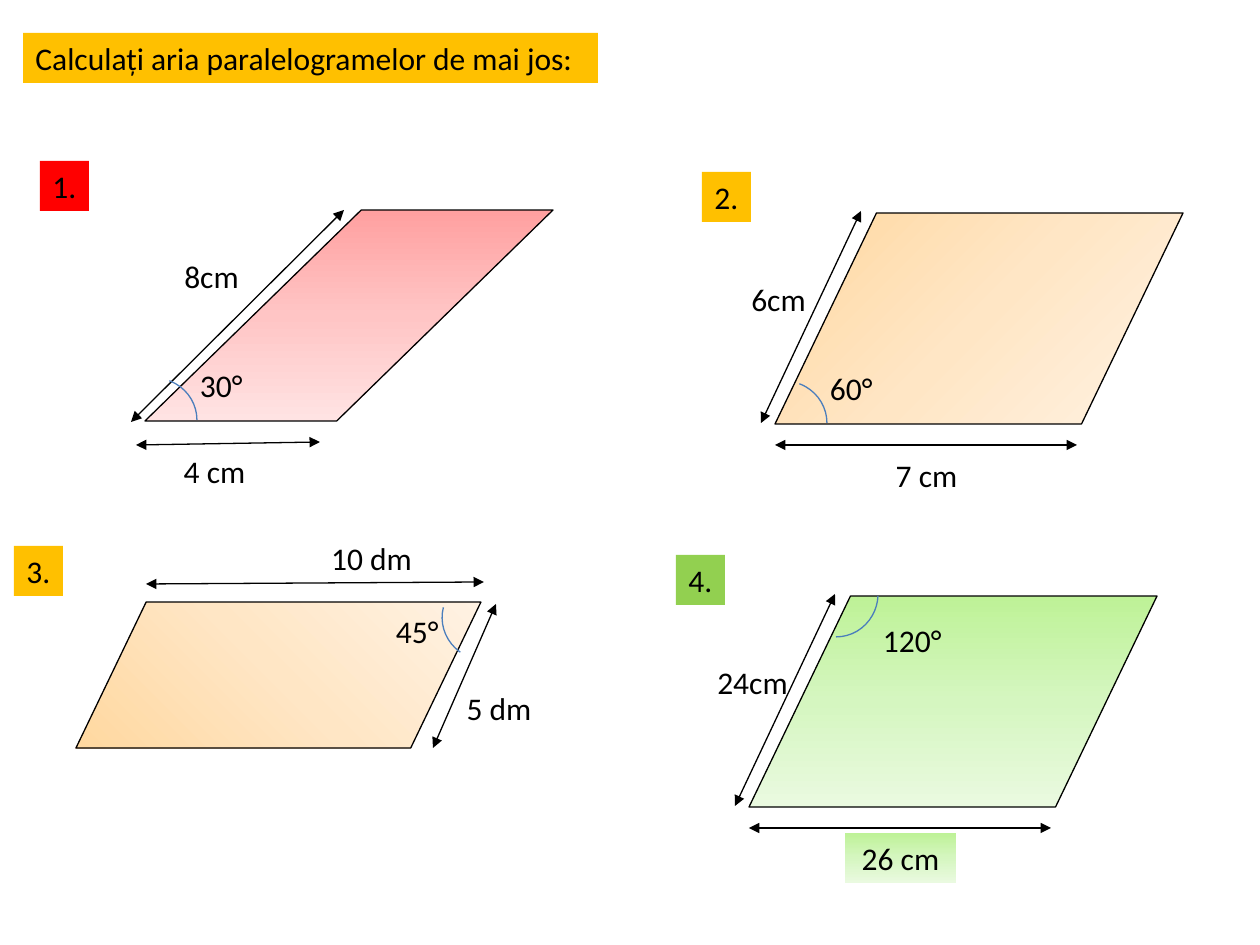
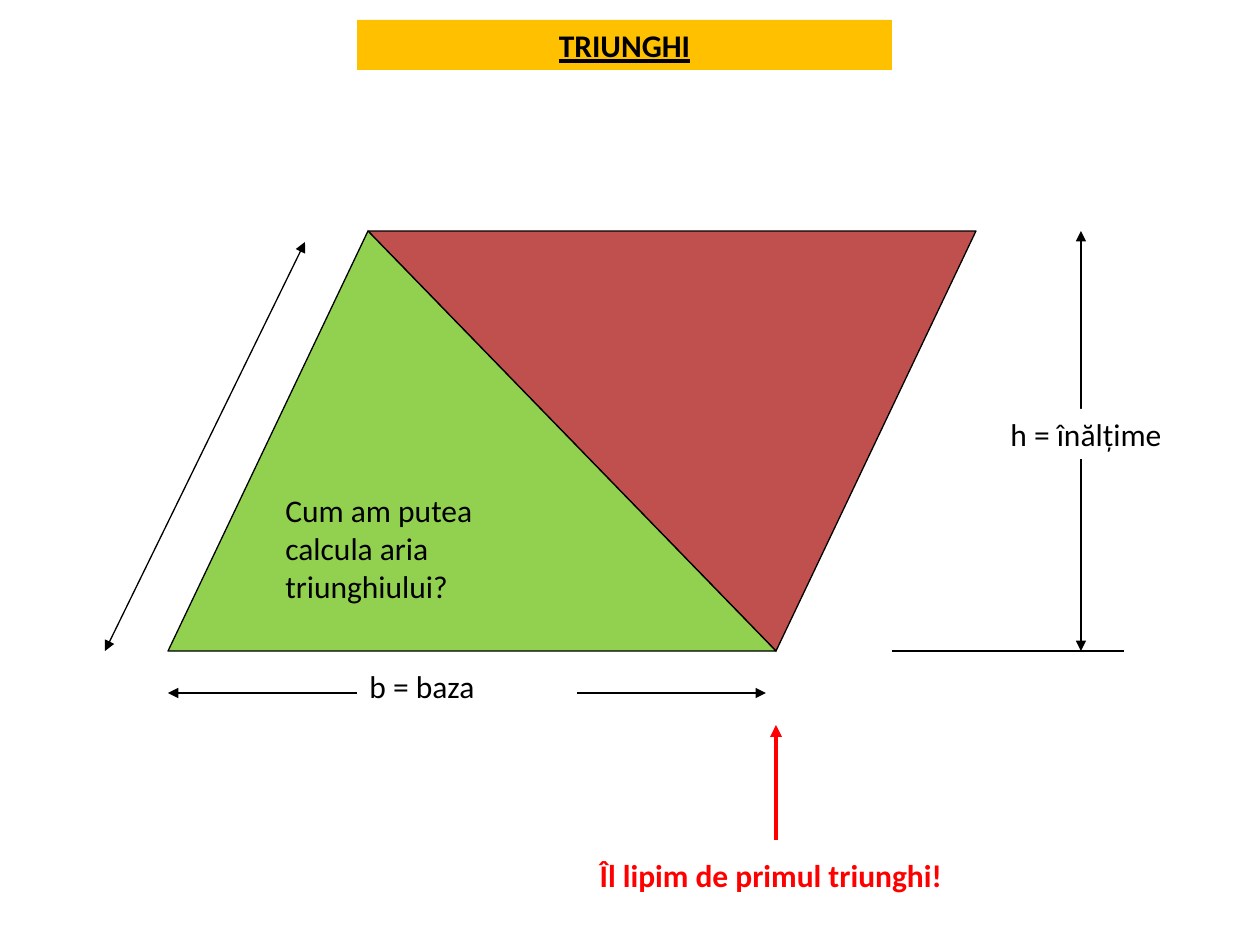
from dataclasses import dataclass

from pptx import Presentation
from pptx.dml.color import RGBColor
from pptx.enum.shapes import MSO_CONNECTOR, MSO_SHAPE
from pptx.enum.text import MSO_AUTO_SIZE, PP_ALIGN
from pptx.oxml import parse_xml
from pptx.oxml.ns import nsdecls, qn
from pptx.util import Emu, Pt

STRAIGHT = MSO_CONNECTOR.STRAIGHT
PARALLELOGRAM, ARC = MSO_SHAPE.PARALLELOGRAM, MSO_SHAPE.ARC
FIT_SHAPE = MSO_AUTO_SIZE.SHAPE_TO_FIT_TEXT
LEFT, CENTER = PP_ALIGN.LEFT, PP_ALIGN.CENTER

PX = 914400 / 126
FONT = "Calibri"
LINE_H = 50

BLACK = RGBColor(0x00, 0x00, 0x00)
WHITE = RGBColor(0xFF, 0xFF, 0xFF)
RED = RGBColor(0xFF, 0x00, 0x00)
AMBER = RGBColor(0xFF, 0xC0, 0x00)
GREEN = RGBColor(0x92, 0xD0, 0x50)
BRICK = RGBColor(0xC0, 0x50, 0x4D)
BLUE = RGBColor(0x4B, 0x7E, 0xBC)
PINKS = [RGBColor(0xFF, 0xA0, 0xA0), RGBColor(0xFF, 0xC5, 0xC5), RGBColor(0xFF, 0xE3, 0xE3)]
PEACHES = [RGBColor(0xFF, 0xD8, 0xA0), RGBColor(0xFF, 0xE6, 0xC5), RGBColor(0xFF, 0xF2, 0xE3)]
LIMES = [RGBColor(0xBE, 0xF2, 0x97), RGBColor(0xD5, 0xF6, 0xC0), RGBColor(0xEA, 0xFA, 0xE0)]

DOWNWARD = '<a:lin ang="5400000" scaled="0"/>'
RADIAL = '<a:path path="circle"><a:fillToRect {}/></a:path>'
FROM_TOP_LEFT = RADIAL.format('r="100000" b="100000"')
FROM_BOTTOM_LEFT = RADIAL.format('t="100000" r="100000"')


@dataclass
class Exercise:
    number: str
    tag_color: RGBColor
    box: tuple
    colors: list
    direction: str
    base: str
    side: str
    angle: str
    slant: float = 0.481
    tag_at: tuple = (-73, -41)
    base_arrow: tuple = (302, 232, 0, 232)
    base_at: tuple = (96, 237)
    base_filled: bool = False
    side_arrow: tuple = (86, -2, -14, 210)
    side_at: tuple = (-45, 61)
    side_w: int = 97
    arc_at: tuple = (-34, 168)
    arc_start: float = 174.874
    arc_turn: float = 0
    angle_at: tuple = (55, 156)


EXERCISES = [
    Exercise("1.", RED, (145, 210, 408, 211), PINKS, DOWNWARD, "4 cm", "8cm", "30°",
             slant=1.025, tag_at=(-105, -49), base_arrow=(175, 232, -9, 235),
             base_at=(14, 236), side_arrow=(199, 0, -14, 212), side_at=(18, 41)),
    Exercise("2.", AMBER, (775, 213, 408, 211), PEACHES, FROM_TOP_LEFT,
             "7 cm", "6cm", "60°"),
    Exercise("3.", AMBER, (76, 602, 405, 146), PEACHES, FROM_BOTTOM_LEFT,
             "10 dm", "5 dm", "45°", tag_at=(-62, -56),
             base_arrow=(408, -20, 70, -18), base_at=(240, -69),
             side_arrow=(420, 2, 357, 146), side_at=(370, 81), side_w=106,
             arc_at=(366, -26), arc_turn=194.4, angle_at=(320, 10)),
    Exercise("4.", GREEN, (749, 596, 408, 211), LIMES, DOWNWARD,
             "26 cm", "24cm", "120°", base_filled=True, arc_at=(44, -44),
             arc_start=163.582, arc_turn=90, angle_at=(134, 25)),
]


def px(*values):
    return [Emu(round(v * PX)) for v in values]


def shift(origin, *coords):
    return [c + origin[i % 2] for i, c in enumerate(coords)]


def paint_gradient(sp, colors, direction):
    stops = "".join(f'<a:gs pos="{i * 50000}"><a:srgbClr val="{c}"/></a:gs>'
                    for i, c in enumerate(colors))
    sp.fill.gradient()
    props = sp._element.spPr
    props.replace(props.find(qn("a:gradFill")), parse_xml(
        f'<a:gradFill {nsdecls("a")} rotWithShape="1"><a:gsLst>{stops}</a:gsLst>'
        f'{direction}</a:gradFill>'))


def outline(sp, color=BLACK, width=0.75):
    sp.shadow.inherit = False
    sp.line.color.rgb = color
    sp.line.width = Pt(width)


def add_label(shapes, text, x, y, w, h=LINE_H, fill=None, color=BLACK, align=LEFT,
              bold=False, underline=False, wrap=True, inset=True):
    sp = shapes.add_textbox(*px(x, y, w, h))
    if fill is not None:
        sp.fill.solid()
        sp.fill.fore_color.rgb = fill
    tf = sp.text_frame
    tf.word_wrap = wrap
    tf.auto_size = FIT_SHAPE
    if not inset:
        tf.margin_left = tf.margin_right = tf.margin_top = tf.margin_bottom = 0
    p = tf.paragraphs[0]
    p.text = text
    p.alignment = align
    p.font.name = FONT
    p.font.size = Pt(18)
    p.font.bold = bold
    p.font.underline = underline
    p.font.color.rgb = color
    return sp


def add_line(shapes, ends, color=BLACK, width=0.75, heads=("headEnd", "tailEnd")):
    line = shapes.add_connector(STRAIGHT, *px(*ends))
    line.line.color.rgb = color
    line.line.width = Pt(width)
    ln = line.line._get_or_add_ln()
    for head in heads:
        ln.append(parse_xml(f'<a:{head} {nsdecls("a")} type="triangle"/>'))
    line._element.spPr.append(parse_xml(f'<a:effectLst {nsdecls("a")}/>'))


def add_exercise(s, ex):
    origin = ex.box[:2]
    shapes = s.shapes.add_group_shape().shapes
    sp = shapes.add_shape(PARALLELOGRAM, *px(*ex.box))
    sp.adjustments[0] = ex.slant
    paint_gradient(sp, ex.colors, ex.direction)
    outline(sp)
    add_line(shapes, shift(origin, *ex.base_arrow))
    base = add_label(shapes, ex.base, *shift(origin, *ex.base_at), 111, align=CENTER)
    if ex.base_filled:
        paint_gradient(base, ex.colors, ex.direction)
    add_line(shapes, shift(origin, *ex.side_arrow))
    add_label(shapes, ex.side, *shift(origin, *ex.side_at), ex.side_w, align=CENTER)

    arc = s.shapes.add_shape(ARC, *px(*shift(origin, *ex.arc_at), 86, 84))
    arc.adjustments[0] = ex.arc_start
    arc.adjustments[1] = 0
    arc.rotation = ex.arc_turn
    arc.fill.background()
    outline(arc, BLUE)
    add_label(s.shapes, ex.angle, *shift(origin, *ex.angle_at), 60, 38,
              wrap=False, inset=False)
    add_label(s.shapes, ex.number, *shift(origin, *ex.tag_at), 49,
              fill=ex.tag_color, wrap=False)


def add_triangle(s, origin, corners, color):
    builder = s.shapes.build_freeform(*corners[0], scale=PX)
    builder.add_line_segments(corners[1:], close=True)
    sp = builder.convert_to_shape(*px(*origin))
    sp.fill.solid()
    sp.fill.fore_color.rgb = color
    outline(sp)


def add_split_parallelogram(s, box):
    x, y, w, h = box
    origin = (x, y)
    lean = 200
    foot = w - lean
    base_y = h + 42
    height_x = w + 105
    add_line(s.shapes, shift(origin, 724, h, 956, h), heads=())
    add_line(s.shapes, shift(origin, height_x, 0, height_x, h))
    add_line(s.shapes, shift(origin, -63, h, 137, 11))
    add_line(s.shapes, shift(origin, 598, base_y, 0, base_y))
    add_label(s.shapes, "Îl lipim de primul triunghi!", *shift(origin, 346, 619), 514,
              color=RED, align=CENTER, bold=True)
    add_line(s.shapes, shift(origin, foot, 609, foot, 494), RED, 2.25, ("tailEnd",))
    add_triangle(s, origin, [(w, 0), (foot, h), (lean, 0)], BRICK)
    add_triangle(s, origin, [(0, h), (lean, 0), (foot, h)], GREEN)
    add_label(s.shapes, "b = baza", *shift(origin, 189, 430), 220, fill=WHITE)
    add_label(s.shapes, "h = înălțime", *shift(origin, 830, 178), 210, fill=WHITE)
    add_label(s.shapes, "Cum am putea calcula aria triunghiului?",
              *shift(origin, 105, 254), 305, 127)


def add_title(s, text, box, **style):
    add_label(s.shapes, text, *box, fill=AMBER, **style)


def main():
    prs = Presentation()
    prs.slide_width, prs.slide_height = px(1260, 945)
    blank = prs.slide_layouts[6]

    s = prs.slides.add_slide(blank)
    for ex in EXERCISES:
        add_exercise(s, ex)
    add_title(s, "Calculați aria paralelogramelor de mai jos:", (23, 33, 575, LINE_H),
              wrap=False)

    s = prs.slides.add_slide(blank)
    add_split_parallelogram(s, (168, 231, 808, 420))
    add_title(s, "TRIUNGHI", (357, 20, 535, LINE_H), align=CENTER, bold=True,
              underline=True)

    prs.save("out.pptx")


if __name__ == "__main__":
    main()
